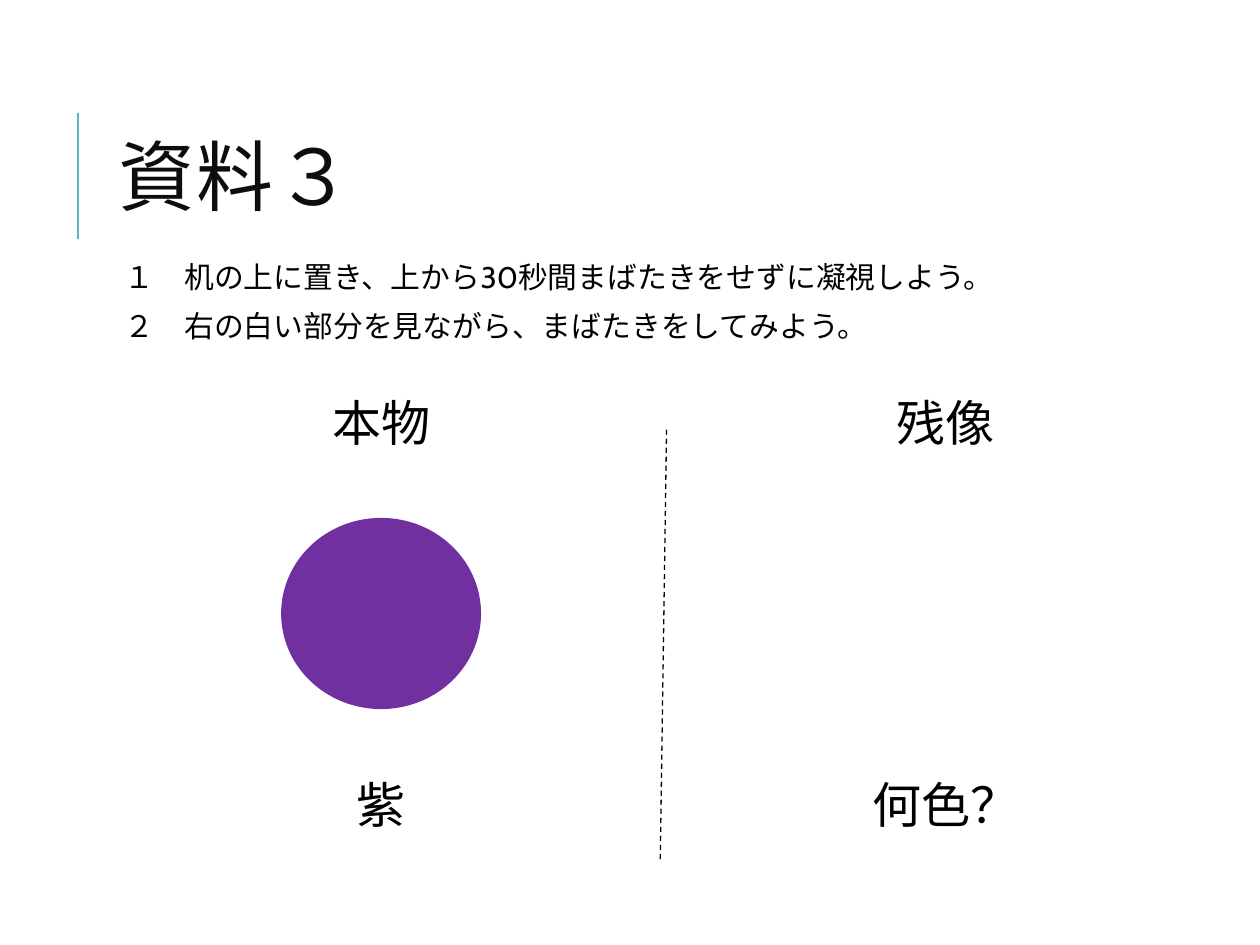
"""Build the afterimage experiment slide."""
from lxml import etree
from pptx import Presentation
from pptx.dml.color import RGBColor
from pptx.enum.dml import MSO_LINE_DASH_STYLE
from pptx.enum.shapes import MSO_CONNECTOR_TYPE, MSO_SHAPE
from pptx.enum.text import MSO_VERTICAL_ANCHOR, PP_PARAGRAPH_ALIGNMENT
from pptx.oxml.ns import qn
from pptx.util import Pt

DASH = MSO_LINE_DASH_STYLE.DASH
STRAIGHT = MSO_CONNECTOR_TYPE.STRAIGHT
OVAL = MSO_SHAPE.OVAL
TOP, MIDDLE = MSO_VERTICAL_ANCHOR.TOP, MSO_VERTICAL_ANCHOR.MIDDLE
LEFT, CENTER = PP_PARAGRAPH_ALIGNMENT.LEFT, PP_PARAGRAPH_ALIGNMENT.CENTER

TITLE = "資料３"
STEPS = [
    "１\u3000机の上に置き、上から30秒間まばたきをせずに凝視しよう。",
    "２\u3000右の白い部分を見ながら、まばたきをしてみよう。",
]
COLUMNS = [("本物", "紫"), ("残像", "何色？")]

THEME = {
    "title_font": "Calibri", "body_font": "Cabin",
    "title_size": 44, "step_size": 17, "label_size": 28,
    "title": "0D0D0D", "text": "000000", "accent": "58B6C0", "sample": "7030A0",
}
COLUMN_CENTERS = (217.8, 540.4)
LABEL_TOPS = (221, 439.2)
LABEL_WIDTH, LABEL_HEIGHT = 212.4, 41
SAMPLE_TOP, SAMPLE_WIDTH, SAMPLE_HEIGHT = 296.6, 113, 108


def color(name):
    """Return a theme colour."""
    return RGBColor.from_string(THEME[name])


def add_text(page, lines, place, size, font="body_font", fill="text", align=LEFT,
             anchor=TOP, inset=(7.2, 3.6), line_spacing=1, before=0, after=0, tracking=0):
    """Add a text box with one paragraph for each line."""
    frame = page.shapes.add_textbox(*map(Pt, place)).text_frame
    frame.word_wrap = True
    frame.vertical_anchor = anchor
    frame.margin_left, frame.margin_top = map(Pt, inset)
    for index, line in enumerate(lines):
        para = frame.add_paragraph() if index else frame.paragraphs[0]
        para.alignment = align
        para.line_spacing = line_spacing
        para.space_before, para.space_after = Pt(before), Pt(after)
        span = para.add_run()
        span.text = line
        span.font.name = THEME[font]
        span.font.size = Pt(THEME[size])
        span.font.color.rgb = color(fill)
        if tracking:
            span.font._element.set("spc", str(tracking * 100))


def add_line(page, ends, fill, width, dash=None):
    """Add a straight line without a shadow."""
    line = page.shapes.add_connector(STRAIGHT, *map(Pt, ends))
    line.line.color.rgb = color(fill)
    line.line.width = Pt(width)
    if dash:
        line.line.dash_style = dash
    etree.SubElement(line._element.spPr, qn("a:effectLst"))


def add_sample(page, center):
    """Add the coloured disc to stare at."""
    place = (center - SAMPLE_WIDTH / 2, SAMPLE_TOP, SAMPLE_WIDTH, SAMPLE_HEIGHT)
    disc = page.shapes.add_shape(OVAL, *map(Pt, place))
    disc.shadow.inherit = False
    disc.fill.solid()
    disc.fill.fore_color.rgb = color("sample")
    disc.line.color.rgb = color("sample")
    disc.line.width = Pt(1.25)


def main():
    """Build and save the deck."""
    deck = Presentation()
    deck.slide_width, deck.slide_height = Pt(720), Pt(540)
    page = deck.slides.add_slide(deck.slide_layouts[6])
    add_line(page, (44.6, 136.8, 44.6, 64.8), "accent", 1.5)
    add_text(page, [TITLE], (60.5, 46, 574, 118), "title_size", font="title_font",
             fill="title", anchor=MIDDLE, line_spacing=0.8, tracking=1)
    add_text(page, STEPS, (60.5, 149.8, 574, 52), "step_size", inset=(10.8, 3.6),
             line_spacing=0.7, before=12, after=2)
    add_sample(page, COLUMN_CENTERS[0])
    add_line(page, (380.9, 245.5, 377.3, 491.8), "text", 0.75, DASH)
    for center, labels in zip(COLUMN_CENTERS, COLUMNS):
        for top, label in zip(LABEL_TOPS, labels):
            place = (center - LABEL_WIDTH / 2, top, LABEL_WIDTH, LABEL_HEIGHT)
            add_text(page, [label], place, "label_size", align=CENTER)
    deck.save("out.pptx")


if __name__ == "__main__":
    main()
